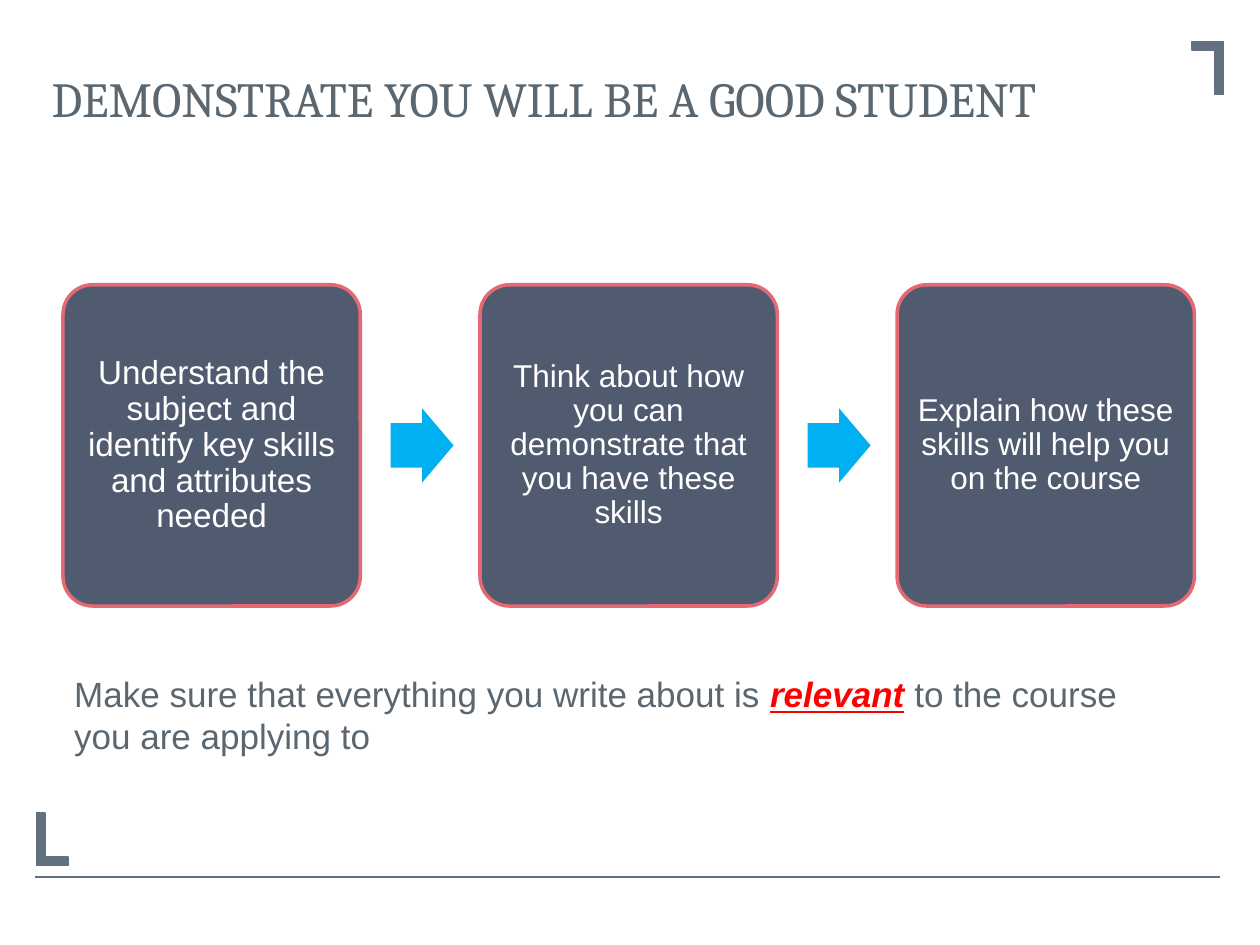
"""Build the 'good student' slide: three linked steps and a closing reminder."""
from lxml import etree
from pptx import Presentation
from pptx.dml.color import RGBColor
from pptx.enum import shapes, text
from pptx.oxml.ns import qn
from pptx.util import Inches, Pt

TITLE = "DEMONSTRATE YOU WILL BE A GOOD STUDENT"
STEPS = [
    ("Understand the subject and identify key skills and attributes needed", 19, 0.08),
    ("Think about how you can demonstrate that you have these skills", 18, 0.07),
    ("Explain how these skills will help you on the course", 18, 0.07),
]
REMINDER = [
    ("Make sure that everything you write about is ", False),
    ("relevant", True),
    (" to the course you are applying to", False),
]
CORNERS = [(9.71, 0.33, -1, 1), (0.29, 6.87, 1, -1)]
THEME = {
    "heading": "Cambria", "body": "Arial", "title_size": 28, "reminder_size": 20,
    "text": "5B6770", "frame": "637080", "card": "515B70", "edge": "E56975",
    "arrow": "00B0F0", "white": "FFFFFF", "alert": "FF0000",
}
CARD_LEFT, CARD_TOP, CARD_W, CARD_H, PITCH = 0.5, 2.26, 2.36, 2.55, 3.31
ARROW_W, ARROW_H, ARROW_OFFSET = 0.5, 0.59, 2.6


def color(name):
    return RGBColor.from_string(THEME[name])


def set_font(font, face, size, name):
    font.name, font.size = THEME[face], Pt(size)
    font.color.rgb = color(name)


def paint(sp, fill, line=None, width=1):
    sp.shadow.inherit = False
    sp.fill.solid()
    sp.fill.fore_color.rgb = color(fill)
    if line:
        sp.line.color.rgb = color(line)
        sp.line.width = Pt(width)
    else:
        sp.line.fill.background()


def add_corner(s, x, y, dx, dy, w=0.25, h=0.42, t=0.07):
    points = [(0, 0), (w, 0), (w, t), (t, t), (t, h), (0, h)]
    outline = [(Inches(x + dx * px), Inches(y + dy * py)) for px, py in points]
    builder = s.shapes.build_freeform(*outline[0])
    builder.add_line_segments(outline[1:], close=True)
    paint(builder.convert_to_shape(), "frame", "frame")


def add_rule(s):
    rule = s.shapes.add_connector(
        shapes.MSO_CONNECTOR.STRAIGHT, Inches(0.28), Inches(6.96), Inches(9.68), Inches(6.96))
    rule.line.color.rgb = color("frame")
    rule.line.width = Pt(1.5)
    etree.SubElement(rule._element.spPr, qn("a:effectLst"))


def add_title(s):
    sp = s.shapes.title
    sp.left, sp.top, sp.width, sp.height = (Inches(v) for v in (0.31, 0.55, 9, 1.3))
    tf = sp.text_frame
    tf.text, tf.word_wrap = TITLE, True
    tf.vertical_anchor = text.MSO_ANCHOR.TOP
    p = tf.paragraphs[0]
    p.alignment, p.line_spacing = text.PP_ALIGN.LEFT, 0.9
    set_font(p.font, "heading", THEME["title_size"], "text")


def add_card(s, left, label, size, inset):
    sp = s.shapes.add_shape(
        shapes.MSO_SHAPE.ROUNDED_RECTANGLE,
        Inches(left), Inches(CARD_TOP), Inches(CARD_W), Inches(CARD_H))
    sp.adjustments[0] = 0.1
    paint(sp, "card", "edge", 2)
    tf = sp.text_frame
    tf.text, tf.word_wrap = label, True
    tf.vertical_anchor = text.MSO_ANCHOR.MIDDLE
    tf.margin_left = tf.margin_right = tf.margin_top = tf.margin_bottom = Inches(inset)
    p = tf.paragraphs[0]
    p.alignment, p.line_spacing = text.PP_ALIGN.CENTER, 0.9
    set_font(p.font, "body", size, "white")


def add_arrow(s, left):
    top = CARD_TOP + (CARD_H - ARROW_H) / 2
    sp = s.shapes.add_shape(
        shapes.MSO_SHAPE.RIGHT_ARROW,
        Inches(left), Inches(top), Inches(ARROW_W), Inches(ARROW_H))
    sp.adjustments[0], sp.adjustments[1] = 0.6, 0.5
    paint(sp, "arrow")


def add_reminder(s):
    tf = s.shapes.add_textbox(Inches(0.49), Inches(5.29), Inches(8.82), Inches(0.77)).text_frame
    tf.word_wrap = True
    tf.auto_size = text.MSO_AUTO_SIZE.SHAPE_TO_FIT_TEXT
    p = tf.paragraphs[0]
    for words, stressed in REMINDER:
        r = p.add_run()
        r.text = words
        set_font(r.font, "body", THEME["reminder_size"], "alert" if stressed else "text")
        if stressed:
            r.font.bold = r.font.italic = r.font.underline = True


def main():
    prs = Presentation()
    prs.slide_width, prs.slide_height = Inches(10), Inches(7.5)
    s = prs.slides.add_slide(prs.slide_layouts[5])
    for corner in CORNERS:
        add_corner(s, *corner)
    add_rule(s)
    add_title(s)
    for i, step in enumerate(STEPS):
        left = CARD_LEFT + i * PITCH
        add_card(s, left, *step)
        if i < len(STEPS) - 1:
            add_arrow(s, left + ARROW_OFFSET)
    add_reminder(s)
    prs.save("out.pptx")


if __name__ == "__main__":
    main()
